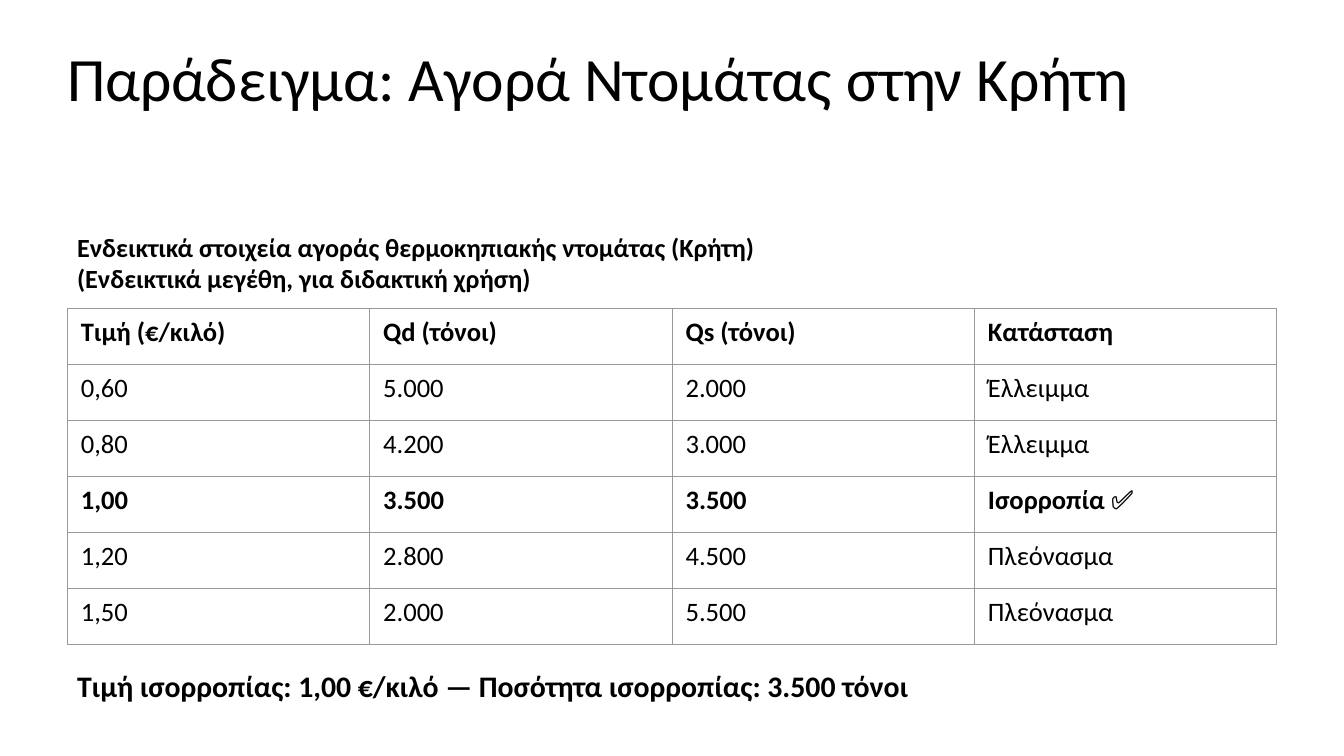
from lxml.etree import SubElement
from pptx import Presentation
from pptx.dml.color import RGBColor
from pptx.enum.text import MSO_ANCHOR
from pptx.oxml.ns import qn
from pptx.util import Emu, Pt

FONT, INK, GRID = "Calibri", "000000", "999999"
LEFT, WIDE = 64, 1152
TITLE = ["Παράδειγμα: Αγορά Ντομάτας στην Κρήτη"]
INTRO = [
    "Ενδεικτικά στοιχεία αγοράς θερμοκηπιακής ντομάτας (Κρήτη)",
    "(Ενδεικτικά μεγέθη, για διδακτική χρήση)",
]
RESULT = ["Τιμή ισορροπίας: 1,00 €/κιλό — Ποσότητα ισορροπίας: 3.500 τόνοι"]
MARKET = [
    ("Τιμή (€/κιλό)", "Qd (τόνοι)", "Qs (τόνοι)", "Κατάσταση"),
    ("0,60", "5.000", "2.000", "Έλλειμμα"),
    ("0,80", "4.200", "3.000", "Έλλειμμα"),
    ("1,00", "3.500", "3.500", "Ισορροπία ✅"),
    ("1,20", "2.800", "4.500", "Πλεόνασμα"),
    ("1,50", "2.000", "5.500", "Πλεόνασμα"),
]
BOLD_ROWS = (0, 3)
TABLE_TOP, TABLE_HIGH = 294, 320


def px(n):
    return Emu(n * 9525)


def color(code):
    return RGBColor.from_string(code)


def style(para, size, bold):
    font = para.font
    font.name, font.size, font.bold = FONT, Pt(size), bold
    font.color.rgb = color(INK)


def add_text(slide, lines, top, high, size, bold=True):
    box = slide.shapes.add_textbox(px(LEFT), px(top), px(WIDE), px(high))
    frame = box.text_frame
    frame.word_wrap = True
    frame.vertical_anchor = MSO_ANCHOR.MIDDLE
    frame.text = "\n".join(lines)
    for para in frame.paragraphs:
        style(para, size, bold)
    return frame


def add_title(slide):
    frame = add_text(slide, TITLE, 38, 154, 44, False)
    frame.vertical_anchor = MSO_ANCHOR.TOP
    frame.margin_left = frame.margin_right = 0
    frame.margin_top = frame.margin_bottom = 0


def add_border(cell):
    props = cell._tc.get_or_add_tcPr()
    for side in ("lnL", "lnR", "lnT", "lnB"):
        line = SubElement(props, qn(f"a:{side}"), w=str(Pt(0.5)))
        fill = SubElement(line, qn("a:solidFill"))
        SubElement(fill, qn("a:srgbClr"), val=GRID)


def add_market(slide):
    rows, cols = len(MARKET), len(MARKET[0])
    table = slide.shapes.add_table(
        rows, cols, px(LEFT), px(TABLE_TOP), px(WIDE), px(TABLE_HIGH)
    ).table
    table.first_row = table.horz_banding = False
    for r, values in enumerate(MARKET):
        for c, value in enumerate(values):
            cell = table.cell(r, c)
            cell.text = value
            cell.margin_left = cell.margin_right = px(13)
            cell.margin_top = cell.margin_bottom = px(7)
            style(cell.text_frame.paragraphs[0], 19, r in BOLD_ROWS)
            add_border(cell)
            cell.fill.background()


def main():
    deck = Presentation()
    deck.slide_width, deck.slide_height = px(1280), px(720)
    slide = deck.slides.add_slide(deck.slide_layouts[6])
    add_title(slide)
    add_text(slide, INTRO, 205, 90, 18.7)
    add_market(slide)
    add_text(slide, RESULT, 627, 51, 21.3)
    deck.save("out.pptx")


if __name__ == "__main__":
    main()
